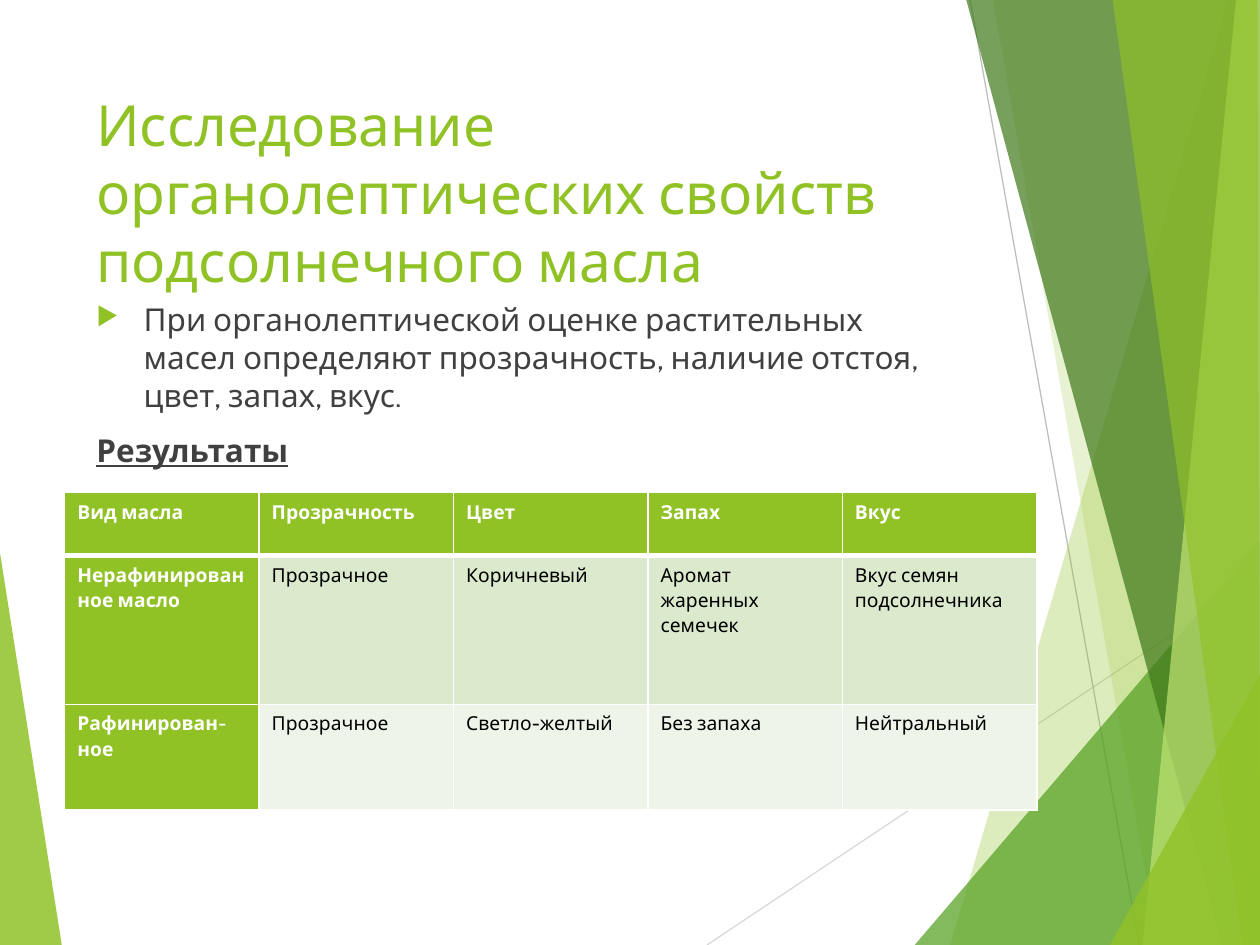
from lxml import etree
from pptx import Presentation
from pptx.dml.color import RGBColor
from pptx.enum.shapes import MSO_CONNECTOR
from pptx.enum.text import MSO_ANCHOR
from pptx.oxml.ns import qn
from pptx.util import Pt

STRAIGHT = MSO_CONNECTOR.STRAIGHT
TOP = MSO_ANCHOR.TOP
FONT = "Cabin"
GREEN, WHITE, BLACK, GREY = "90C226", "FFFFFF", "000000", "404040"

# Outline, colour and opacity in percent, from back to front
FACETS = [
    ([(702, 0), (543, 540), (720, 540), (720, 0)], GREEN, 30),
    ([(567.4, 0), (661.7, 540), (720, 540), (720, 0)], GREEN, 20),
    ([(522.7, 540), (720, 309), (720, 540)], "54A021", 72),
    ([(552.2, 0), (698.4, 540), (720, 540), (720, 0)], "3F7819", 70),
    ([(706.3, 0), (653, 540), (720, 540), (720, 0)], "C0E474", 70),
    ([(635.8, 0), (710, 540), (720, 540), (718.6, 0)], GREEN, 65),
    ([(634.3, 540), (720, 385.2), (720, 540)], GREEN, 80),
]
LEFT_WEDGE = ([(0, 316), (35.3, 540), (0, 540)], GREEN, 85)
RAYS = [((404, 540), (720, 329), "D9D9D9"), ((554.4, 0), (651, 540), "BFBFBF")]

RESULTS = [
    ["Вид масла", "Прозрачность", "Цвет", "Запах", "Вкус"],
    ["Нерафинированное масло", "Прозрачное", "Коричневый",
     "Аромат жаренных семечек", "Вкус семян подсолнечника"],
    ["Рафинирован-ное", "Прозрачное", "Светло-желтый", "Без запаха", "Нейтральный"],
]
ROW_HEIGHTS = [36, 85, 60.5]
ROW_FILLS = [GREEN, "DBE9CD", "EEF4E8"]


def rgb(color):
    return RGBColor.from_string(color)


def format_run(r, size, color, bold=False):
    r.font.name = FONT
    r.font.size = Pt(size)
    r.font.color.rgb = rgb(color)
    r.font.bold = bold


def add_facet(s, x, y, points, color, opacity):
    corners = [(Pt(x + px), Pt(y + py)) for px, py in points]
    builder = s.shapes.build_freeform(*corners[0], scale=1.0)
    builder.add_line_segments(corners[1:], close=True)
    sp = builder.convert_to_shape()
    sp.shadow.inherit = False
    sp.fill.solid()
    sp.fill.fore_color.rgb = rgb(color)
    sp.line.fill.background()
    clr = sp.fill._xPr.find(qn("a:solidFill")).find(qn("a:srgbClr"))
    etree.SubElement(clr, qn("a:alpha"), val=str(opacity * 1000))


def add_ray(s, x, y, start, end, color):
    ray = s.shapes.add_connector(STRAIGHT, Pt(x + start[0]), Pt(y + start[1]),
                                 Pt(x + end[0]), Pt(y + end[1]))
    ray.line.color.rgb = rgb(color)
    ray.line.width = Pt(0.75)
    etree.SubElement(ray._element.spPr, qn("a:effectLst"))


def add_background(s, x, y):
    add_facet(s, x, y, *LEFT_WEDGE)
    for ray in RAYS:
        add_ray(s, x, y, *ray)
    for facet in FACETS:
        add_facet(s, x, y, *facet)


def add_text_frame(s, x, y, w, h):
    tf = s.shapes.add_textbox(Pt(x), Pt(y), Pt(w), Pt(h)).text_frame
    tf.word_wrap = True
    tf.vertical_anchor = TOP
    return tf


def add_title(s, x, y, w, h):
    tf = add_text_frame(s, x, y, w, h)
    tf.text = "Исследование органолептических свойств подсолнечного масла"
    format_run(tf.paragraphs[0].runs[0], 32.4, GREEN)


def add_bullet(p, indent):
    pPr = p._p.get_or_add_pPr()
    pPr.set("marL", str(Pt(indent)))
    pPr.set("indent", str(-Pt(indent)))
    clr = etree.SubElement(pPr, qn("a:buClr"))
    etree.SubElement(clr, qn("a:srgbClr"), val=GREEN)
    etree.SubElement(pPr, qn("a:buSzPct"), val="80000")
    etree.SubElement(pPr, qn("a:buChar"), char="▶")


def add_body(s, x, y, w, h):
    tf = add_text_frame(s, x, y, w, h)
    tf.text = ("При органолептической оценке растительных масел определяют "
               "прозрачность, наличие отстоя, цвет, запах, вкус.")
    intro, heading = tf.paragraphs[0], tf.add_paragraph()
    heading.text = "Результаты"
    for p in (intro, heading):
        p.space_before = Pt(10)
        format_run(p.runs[0], 18, GREY, bold=p is heading)
    heading.runs[0].font.underline = True
    add_bullet(intro, 27)


def set_borders(cell, top, bottom):
    tcPr = cell._tc.get_or_add_tcPr()
    for i, (side, width) in enumerate(zip("LRTB", (1, 1, top, bottom))):
        ln = etree.Element(qn("a:ln" + side), w=str(Pt(width)))
        fill = etree.SubElement(ln, qn("a:solidFill"))
        etree.SubElement(fill, qn("a:srgbClr"), val=WHITE)
        tcPr.insert(i, ln)


def add_results(s, x, y, w):
    n_rows, n_cols = len(RESULTS), len(RESULTS[0])
    table = s.shapes.add_table(n_rows, n_cols, Pt(x), Pt(y), Pt(w),
                               Pt(sum(ROW_HEIGHTS))).table
    for column in table.columns:
        column.width = Pt(w / n_cols)
    for i, row in enumerate(RESULTS):
        table.rows[i].height = Pt(ROW_HEIGHTS[i])
        for j, text in enumerate(row):
            cell = table.cell(i, j)
            is_head = i == 0 or j == 0
            cell.fill.solid()
            cell.fill.fore_color.rgb = rgb(GREEN if is_head else ROW_FILLS[i])
            # A thick rule parts the header from the results
            set_borders(cell, top=3 if i == 1 else 1, bottom=3 if i == 0 else 1)
            p = cell.text_frame.paragraphs[0]
            p.text = text
            p.line_spacing = 1.07
            p.space_after = Pt(8)
            format_run(p.runs[0], 11, WHITE if is_head else BLACK, bold=is_head)


def main():
    prs = Presentation()
    prs.slide_width, prs.slide_height = Pt(720), Pt(540)
    s = prs.slides.add_slide(prs.slide_layouts[6])
    add_background(s, 0, 0)
    add_title(s, 48, 48, 544, 103)
    add_body(s, 48, 168, 500, 305)
    add_results(s, 37, 281.5, 555.5)
    prs.save("out.pptx")


if __name__ == "__main__":
    main()
